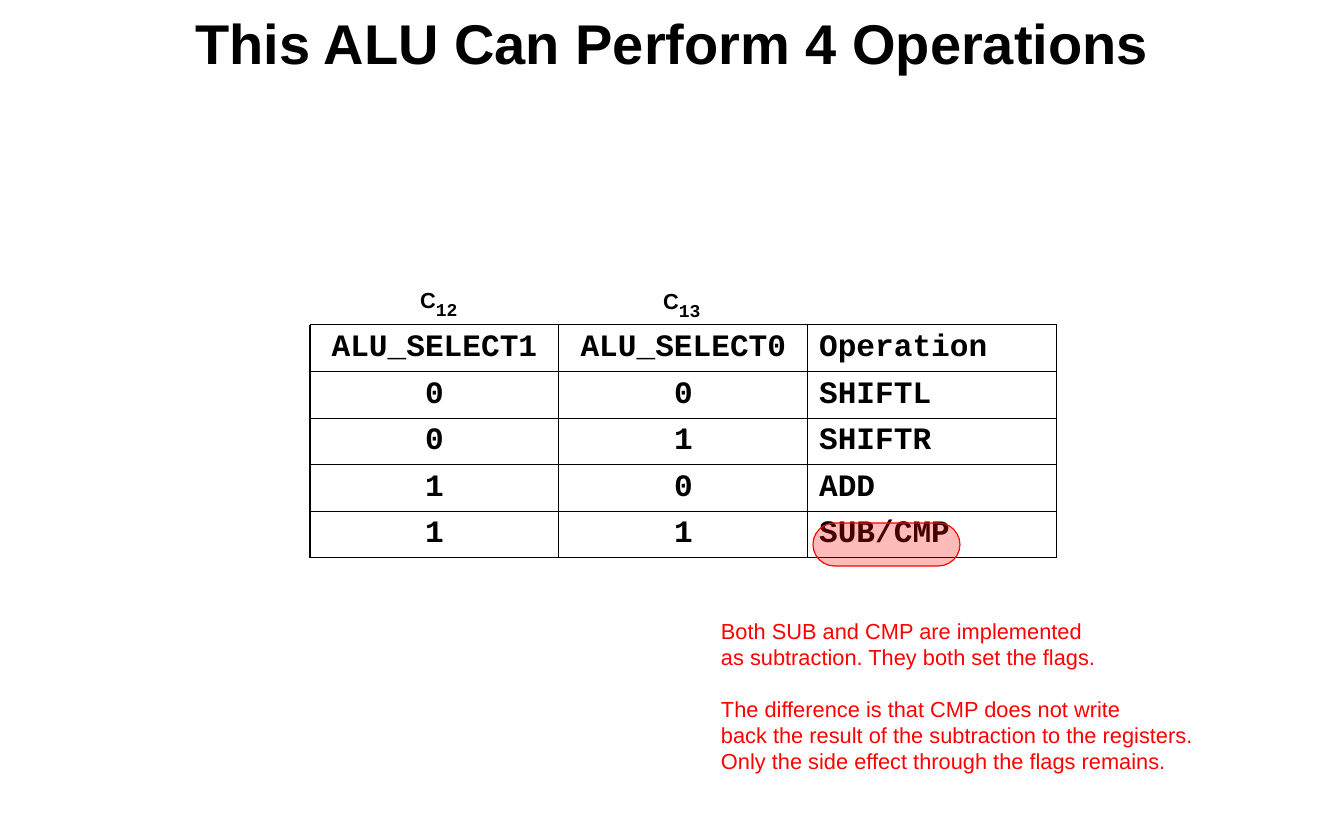
from pptx import Presentation
from pptx.dml.color import RGBColor
from pptx.enum.shapes import MSO_SHAPE as Shape
from pptx.enum.text import MSO_ANCHOR as Anchor, MSO_AUTO_SIZE as AutoSize, PP_ALIGN as Align
from pptx.oxml.ns import qn
from pptx.util import Emu, Pt
from lxml.etree import SubElement

PX = 914400 // 112
BLACK, RED = "000000", "FF0000"
SANS, MONO = "Arial", "Courier New"


def px(length):
    return Emu(length * PX)


def color(code):
    return RGBColor.from_string(code)


class SlideBuilder:
    border = Pt(0.75)
    inset = 11

    def __init__(self, slide):
        self.slide = slide

    def run(self, paragraph, text, size, font=SANS, ink=BLACK, bold=True, baseline=0):
        run = paragraph.add_run()
        run.text = text
        run.font.size = Pt(size)
        run.font.name = font
        run.font.bold = bold
        run.font.color.rgb = color(ink)
        if baseline:
            run.font._element.set("baseline", str(baseline * 1000))

    def text_frame(self, x, y, width, height, wrap=False):
        frame = self.slide.shapes.add_textbox(px(x), px(y), px(width), px(height)).text_frame
        frame.word_wrap = wrap
        frame.auto_size = AutoSize.NONE if wrap else AutoSize.SHAPE_TO_FIT_TEXT
        return frame

    def title(self, text, x, y, width, height):
        frame = self.text_frame(x, y, width, height, wrap=True)
        frame.margin_top = frame.margin_bottom = px(self.inset)
        frame.vertical_anchor = Anchor.MIDDLE
        heading = frame.paragraphs[0]
        heading.alignment = Align.CENTER
        self.run(heading, text, 36)

    def signal(self, letter, index, x, y):
        label = self.text_frame(x, y, 64, 38).paragraphs[0]
        self.run(label, letter, 14)
        self.run(label, index, 20, MONO, baseline=-25)

    def note(self, blocks, x, y, width, height):
        frame = self.text_frame(x, y, width, height)
        lines = [(line, block > 0 and row == 0)
                 for block, rows in enumerate(blocks) for row, line in enumerate(rows)]
        for number, (line, opens_block) in enumerate(lines):
            paragraph = frame.add_paragraph() if number else frame.paragraphs[0]
            if opens_block:
                paragraph.space_before = Pt(16.5)
            self.run(paragraph, line, 14, ink=RED, bold=False)

    def truth_table(self, rows, x, y, column_width, row_height):
        columns = len(rows[0])
        table = self.slide.shapes.add_table(
            len(rows), columns, px(x), px(y),
            px(column_width * columns), px(row_height * len(rows))).table
        table.first_row = table.horz_banding = False
        for column in table.columns:
            column.width = px(column_width)
        for r, row in enumerate(rows):
            table.rows[r].height = px(row_height)
            for c, value in enumerate(row):
                self.cell(table.cell(r, c), value, Align.LEFT if c == columns - 1 else Align.CENTER)

    def cell(self, cell, value, alignment):
        properties = cell._tc.get_or_add_tcPr()
        for side in ("lnL", "lnR", "lnT", "lnB"):
            edge = SubElement(properties, qn(f"a:{side}"), w=str(self.border))
            fill = SubElement(edge, qn("a:solidFill"))
            SubElement(fill, qn("a:srgbClr"), val=BLACK)
        cell.fill.background()
        paragraph = cell.text_frame.paragraphs[0]
        paragraph.alignment = alignment
        self.run(paragraph, value, 20, MONO)

    def highlight(self, x, y, width, height, opacity):
        pill = self.slide.shapes.add_shape(
            Shape.ROUNDED_RECTANGLE, px(x), px(y), px(width), px(height))
        pill.adjustments[0] = 0.5
        pill.shadow.inherit = False
        pill.fill.solid()
        pill.fill.fore_color.rgb = color(RED)
        tint = pill._element.spPr.find(qn("a:solidFill")).find(qn("a:srgbClr"))
        SubElement(tint, qn("a:alpha"), val=str(opacity * 1000))
        pill.line.color.rgb = color(RED)
        pill.line.width = self.border


OPERATIONS = [
    ("ALU_SELECT1", "ALU_SELECT0", "Operation"),
    ("0", "0", "SHIFTL"),
    ("0", "1", "SHIFTR"),
    ("1", "0", "ADD"),
    ("1", "1", "SUB/CMP"),
]
EXPLANATION = [
    ("Both SUB and CMP are implemented",
     "as subtraction. They both set the flags."),
    ("The difference is that CMP does not write",
     "back the result of the subtraction to the registers.",
     "Only the side effect through the flags remains."),
]


def main():
    deck = Presentation()
    deck.slide_width, deck.slide_height = px(1344), px(840)
    builder = SlideBuilder(deck.slides.add_slide(deck.slide_layouts[6]))
    builder.title("This ALU Can Perform 4 Operations", 112, 0, 1120, 84)
    builder.truth_table(OPERATIONS, 310, 325, 249, 46)
    builder.signal("C", "12", 409, 272)
    builder.signal("C", "13", 652, 273)
    builder.highlight(813, 523, 147, 43, 27)
    builder.note(EXPLANATION, 710, 612, 496, 169)
    deck.save("out.pptx")


if __name__ == "__main__":
    main()
